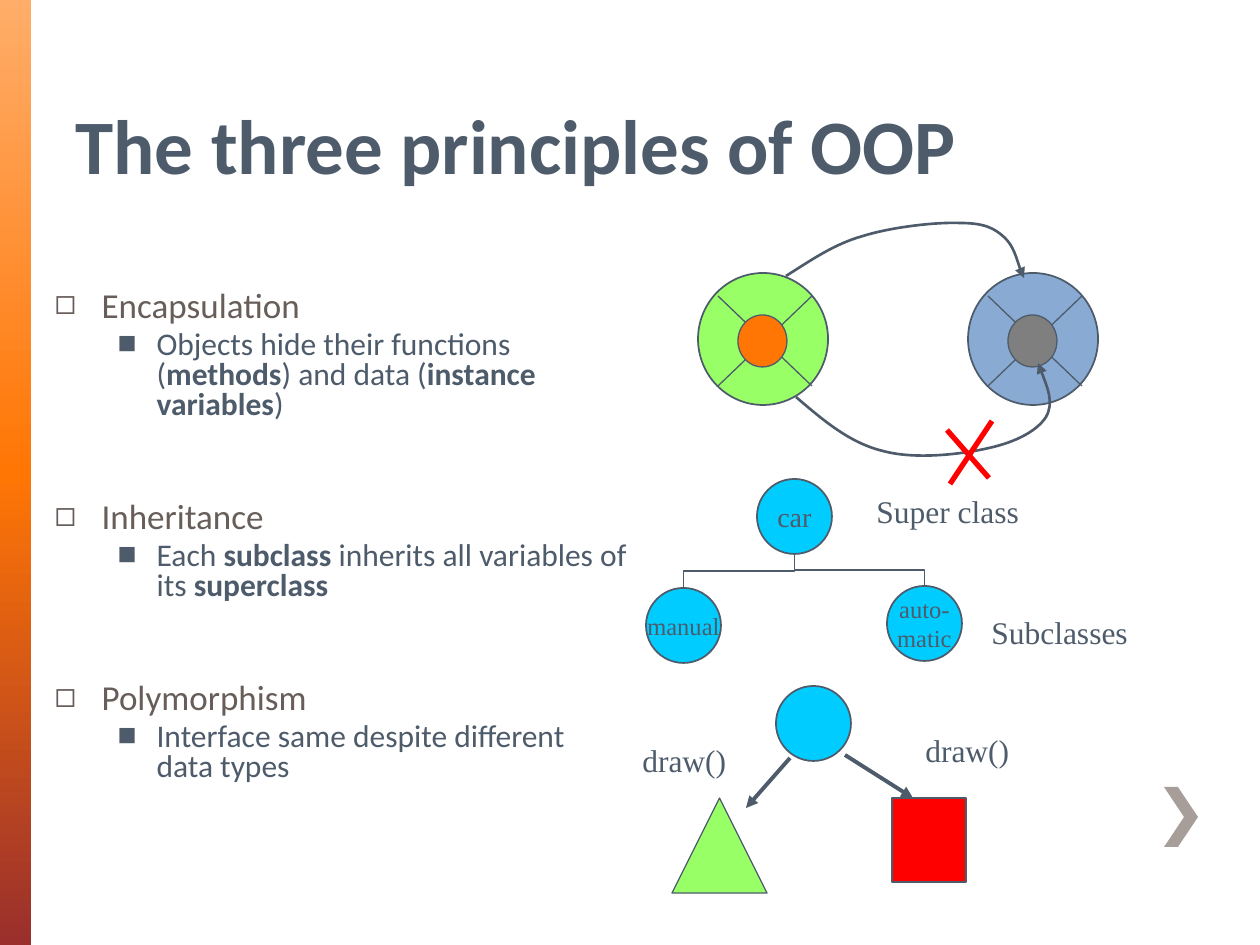
"""Builds a slide on the three principles of object-oriented programming."""
from copy import deepcopy

from lxml.etree import SubElement
from pptx import Presentation
from pptx.dml.color import RGBColor
from pptx.enum.shapes import MSO_CONNECTOR as LINK, MSO_SHAPE as SHAPE
from pptx.enum.text import MSO_ANCHOR as ANCHOR, MSO_AUTO_SIZE as FIT, PP_ALIGN as ALIGN
from pptx.oxml.ns import qn
from pptx.util import Emu, Pt

SCALE = 914400 / 126
SANS, SERIF = "Calibri", "Times New Roman"
COLOURS = {
    "ink": "4D5B6B", "brown": "675D59", "chevron": "A79D99", "green": "99FF66",
    "blue": "89AAD3", "orange": "FF7605", "grey": "7F7F7F", "cyan": "00CCFF",
    "red": "FF0000", "peach": "FFAD69", "maroon": "9A2F2C",
}

TITLE = "The three principles of OOP"
PRINCIPLES = [
    ("Encapsulation", [("Objects hide their functions (", False), ("methods", True),
                       (") and data (", False), ("instance variables", True), (")", False)]),
    ("Inheritance", [("Each ", False), ("subclass", True),
                     (" inherits all variables of its ", False), ("superclass", True)]),
    ("Polymorphism", [("Interface same despite different data types", False)]),
]
LEVELS = [("◻", 47, -47, 20, "brown"), ("■", 102, -39, 18, "ink")]
SIDEBAR = [(0, "peach"), (0.5, "orange"), (1, "maroon")]
WHEELS = [(698, "green", "orange"), (968, "blue", "grey")]
NODE = 75
NODES = [(757, 479, ["car"], 16), (887, 586, ["auto-", "matic"], 14),
         (646, 588, ["manual"], 14), (776, 686, [], 14)]
LABELS = [("Super class", 864, 486, 215), ("Subclasses", 979, 607, 208),
          ("draw()", 630, 735, 137), ("draw()", 913, 725, 137)]
DRAW_ARROWS = [(790, 758, 746, 808), (845, 755, 913, 798)]
MESSAGES = [
    [(786, 276), (810, 261), (834, 244), (863, 236), (892, 227), (936, 222), (960, 223),
     (984, 223), (994, 228), (1004, 237), (1014, 246), (1020, 271), (1024, 278)],
    [(796, 397), (824, 421), (850, 443), (883, 451), (916, 460), (963, 454), (989, 448),
     (1016, 442), (1037, 431), (1046, 417), (1054, 403), (1046, 383), (1038, 363)],
]
CROSS = [(947, 430, 989, 478), (950, 484, 992, 421)]


def px(length):
    return Emu(round(length * SCALE))


def colour(name):
    return RGBColor.from_string(COLOURS[name])


def add_span(para, text, font, size, name, bold=False):
    span = para.add_run()
    span.text = text
    span.font.name, span.font.size, span.font.bold = font, Pt(size), bold
    span.font.color.rgb = colour(name)


def set_line(item, width, name="ink", arrow=False):
    item.line.width = Pt(width)
    item.line.color.rgb = colour(name)
    if arrow:
        SubElement(item.line._get_or_add_ln(), qn("a:tailEnd"), type="triangle")


def add_shape(page, kind, left, top, width, height, fill=None, line=0):
    shape = page.shapes.add_shape(kind, px(left), px(top), px(width), px(height))
    shape.shadow.inherit = False
    if fill:
        shape.fill.solid()
        shape.fill.fore_color.rgb = colour(fill)
    if line:
        set_line(shape, line)
    else:
        shape.line.fill.background()
    return shape


def add_link(page, ends, width, name="ink", arrow=False, kind=LINK.STRAIGHT):
    link = page.shapes.add_connector(kind, *map(px, ends))
    SubElement(link._element.spPr, qn("a:effectLst"))
    set_line(link, width, name, arrow)
    return link


def add_branch(page, start, end):
    (x1, y1), (x2, y2) = start, end
    mid_x, mid_y = (x1 + x2) / 2, (y1 + y2) / 2
    drop, run = (y2 - y1) / 2, abs(x2 - x1) / 2
    side, turn = (1, 90) if x2 < x1 else (-1, 270)
    ends = (mid_x - side * drop, mid_y - run, mid_x + side * drop, mid_y + run)
    link = add_link(page, ends, 0.75, kind=LINK.ELBOW)
    link._element.spPr.find(qn("a:xfrm")).set("rot", str(turn * 60000))


def add_curve(page, points):
    builder = page.shapes.build_freeform(*points[0], scale=SCALE)
    builder.add_line_segments(points[1:], close=False)
    curve = builder.convert_to_shape()
    curve.shadow.inherit = False
    curve.fill.background()
    set_line(curve, 1.5, arrow=True)
    outline = next(curve._element.iter(qn("a:path")))
    steps = outline.findall(qn("a:lnTo"))
    for first in range(0, len(steps), 3):
        bend = SubElement(outline, qn("a:cubicBezTo"))
        for step in steps[first:first + 3]:
            bend.append(step[0])
            outline.remove(step)


def add_sidebar(page):
    bar = add_shape(page, SHAPE.RECTANGLE, 0, 0, 31, 945)
    bar.fill.gradient()
    bar.fill.gradient_angle = 270
    stops = bar._element.spPr.find(qn("a:gradFill")).find(qn("a:gsLst"))
    stops.append(deepcopy(stops[0]))
    for stop, (position, name) in zip(bar.fill.gradient_stops, SIDEBAR):
        stop.position = position
        stop.color.rgb = colour(name)


def place(box, left, top, width, height):
    box.left, box.top, box.width, box.height = map(px, (left, top, width, height))
    box.text_frame.word_wrap = True
    box.text_frame.auto_size = FIT.NONE


def add_item(para, level, spans, before):
    bullet, margin, indent, size, name = LEVELS[level]
    para.level = level
    para.line_spacing, para.space_before = 0.8, Pt(before)
    props = para._p.get_or_add_pPr()
    props.set("marL", str(px(margin)))
    props.set("indent", str(px(indent)))
    SubElement(props, qn("a:buChar"), char=bullet)
    for text, bold in spans:
        add_span(para, text, SANS, size, name, bold)


def fill_text(page):
    title, body = page.placeholders
    place(title, 63, 38, 1113, 158)
    title.text_frame.vertical_anchor = ANCHOR.BOTTOM
    heading = title.text_frame.paragraphs[0]
    heading.alignment = ALIGN.LEFT
    add_span(heading, TITLE, SANS, 44, "ink", True)
    place(body, 42, 285, 598, 567)
    frame = body.text_frame
    for index, (name, details) in enumerate(PRINCIPLES):
        para = frame.add_paragraph() if index else frame.paragraphs[0]
        add_item(para, 0, [(name, False)], 46 if index else 0)
        add_item(frame.add_paragraph(), 1, details, 3.6)


def add_wheel(page, left, rim, hub):
    top = 273
    add_shape(page, SHAPE.OVAL, left, top, 130, 132, rim, 1)
    low, high, near, far = top + 113, top + 23, left + 20, left + 114
    add_link(page, (near, low, far, high), 0.75)
    add_link(page, (near, high, far, low), 0.75)
    add_shape(page, SHAPE.OVAL, left + 40, top + 42, 49, 52, hub, 0.75)


def add_node(page, left, top, lines, size):
    frame = add_shape(page, SHAPE.OVAL, left, top, NODE, NODE, "cyan", 1).text_frame
    frame.word_wrap = False
    frame.vertical_anchor = ANCHOR.MIDDLE
    for index, text in enumerate(lines):
        para = frame.add_paragraph() if index else frame.paragraphs[0]
        para.alignment = ALIGN.CENTER
        add_span(para, text, SERIF, size, "ink")


def main():
    deck = Presentation()
    deck.slide_width, deck.slide_height = px(1260), px(945)
    page = deck.slides.add_slide(deck.slide_layouts[1])
    add_sidebar(page)
    add_shape(page, SHAPE.CHEVRON, 1164, 787, 34, 60, "chevron").adjustments[0] = 0.59
    fill_text(page)
    for node in NODES:
        add_node(page, *node)
    half = NODE / 2
    parent, *children = [(left + half, top) for left, top, *_ in NODES[:3]]
    for child in children:
        add_branch(page, (parent[0], parent[1] + NODE), child)
    for text, left, top, width in LABELS:
        box = page.shapes.add_textbox(px(left), px(top), px(width), px(63))
        box.text_frame.word_wrap = False
        add_span(box.text_frame.paragraphs[0], text, SERIF, 18, "ink")
    for ends in DRAW_ARROWS:
        add_link(page, ends, 2.25, arrow=True)
    add_shape(page, SHAPE.ISOSCELES_TRIANGLE, 672, 798, 95, 95, "green", 0.75)
    add_shape(page, SHAPE.RECTANGLE, 892, 798, 74, 84, "red", 0.75)
    for wheel in WHEELS:
        add_wheel(page, *wheel)
    for points in MESSAGES:
        add_curve(page, points)
    for ends in CROSS:
        add_link(page, ends, 3, "red")
    deck.save("out.pptx")


if __name__ == "__main__":
    main()
